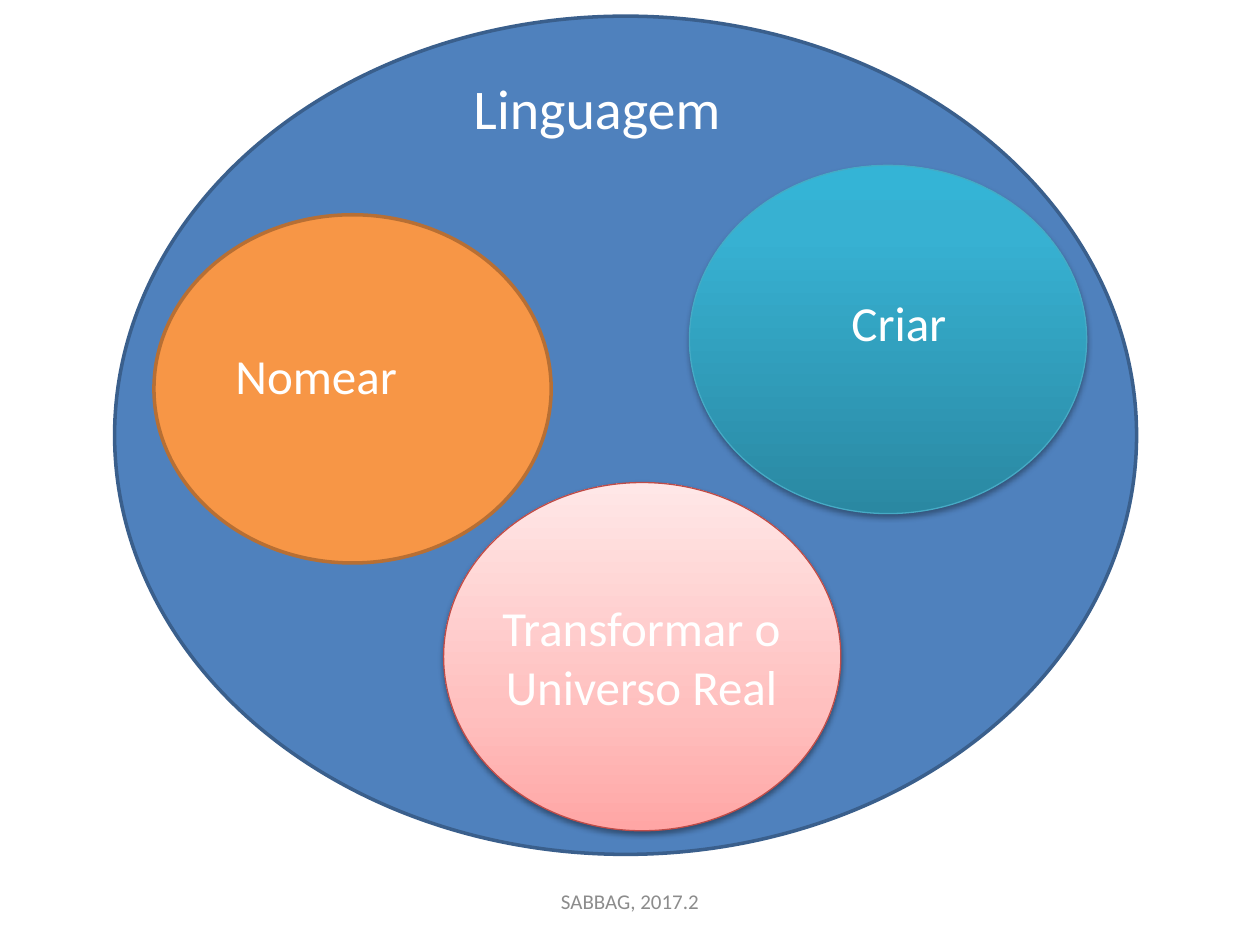
from lxml import etree
from pptx import Presentation
from pptx import util as u
from pptx.dml.color import RGBColor
from pptx.enum import shapes, text
from pptx.oxml.ns import qn

FONT = "Calibri"
CIRCLE = (227, 199)  # width and height of the inner ellipses


def rgb(value):
    return RGBColor.from_string(value)


def color_node(parent, value):
    return etree.SubElement(parent, qn("a:srgbClr"), val=value)


def set_gradient(sp, stops):
    """Vertical gradient; stops run from bottom to top as (percent, colour)."""
    sp.fill.gradient()
    sp.fill.gradient_angle = 90
    stop_list = sp._element.spPr.find(".//" + qn("a:gsLst"))
    for old in list(stop_list):
        stop_list.remove(old)
    for percent, value in stops:
        gs = etree.SubElement(stop_list, qn("a:gs"), pos=str(percent * 1000))
        color_node(gs, value)


def set_shadow(sp, alpha, blur, dist):
    """Black shadow falling straight down."""
    effects = sp._element.spPr.find(qn("a:effectLst"))
    shadow = etree.SubElement(
        effects, qn("a:outerShdw"), blurRad=str(u.Pt(blur)),
        dist=str(u.Pt(dist)), dir="5400000", rotWithShape="0")
    etree.SubElement(color_node(shadow, "000000"), qn("a:alpha"),
                     val=str(alpha * 1000))


def add_ellipse(s, left, top, size, fill, line, weight, shadow=None):
    sp = s.shapes.add_shape(shapes.MSO_SHAPE.OVAL, u.Pt(left), u.Pt(top),
                            u.Pt(size[0]), u.Pt(size[1]))
    if isinstance(fill, str):
        sp.fill.solid()
        sp.fill.fore_color.rgb = rgb(fill)
    else:
        set_gradient(sp, fill)
    sp.line.color.rgb = rgb(line)
    sp.line.width = u.Pt(weight)
    sp.shadow.inherit = False
    if shadow:
        set_shadow(sp, *shadow)


def add_label(s, words, left, top, width, height, size, color="FFFFFF",
              align=text.PP_ALIGN.LEFT, anchor=text.MSO_ANCHOR.TOP):
    sp = s.shapes.add_textbox(u.Pt(left), u.Pt(top), u.Pt(width), u.Pt(height))
    tf = sp.text_frame
    tf.word_wrap = True
    tf.vertical_anchor = anchor
    p = tf.paragraphs[0]
    p.alignment = align
    r = p.add_run()
    r.text = words
    r.font.name = FONT
    r.font.size = u.Pt(size)
    r.font.color.rgb = rgb(color)


def main():
    prs = Presentation()
    prs.slide_width, prs.slide_height = u.Pt(720), u.Pt(540)
    s = prs.slides.add_slide(prs.slide_layouts[6])
    center = text.PP_ALIGN.CENTER

    # Footer
    add_label(s, "SABBAG, 2017.2", 246, 500.5, 228, 28.75, 12, "8C8C8C",
              center, text.MSO_ANCHOR.MIDDLE)

    # Language, holding its three functions
    add_ellipse(s, 65.5, 9.25, (584, 479), "4F81BD", "3A5F8C", 2)
    add_ellipse(s, 394, 94.5, CIRCLE,
                [(0, "2A88A2"), (80, "37B1D2"), (100, "34B4D6")],
                "46AAC5", 0.75, (35, 3.1, 1.8))
    add_ellipse(s, 88, 122.75, CIRCLE, "F79646", "B76F34", 2)
    add_ellipse(s, 253.5, 275.75, CIRCLE,
                [(0, "FFA6A5"), (35, "FFC0BF"), (100, "FFE7E7")],
                "BF4C48", 0.75, (38, 3.1, 1.6))

    # Labels
    add_label(s, "Linguagem", 263.5, 38.25, 260.5, 46, 32)
    add_label(s, "Nomear", 127.5, 193.75, 158.5, 41, 28)
    add_label(s, "Criar", 479.5, 163.75, 165.5, 41, 28)
    add_label(s, "Transformar o Universo Real", 273, 338, 187, 75, 28,
              align=center)

    prs.save("out.pptx")


if __name__ == "__main__":
    main()
